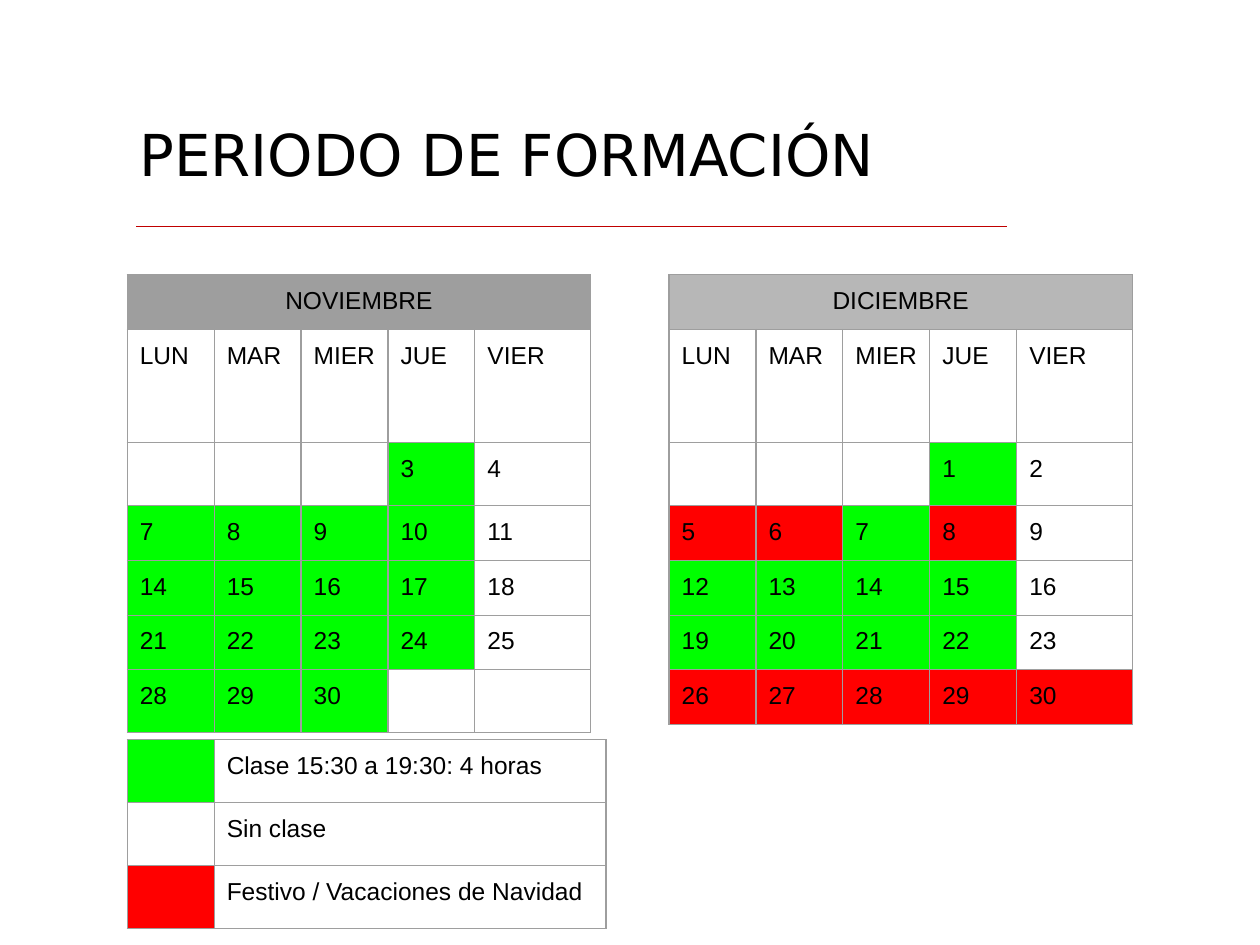
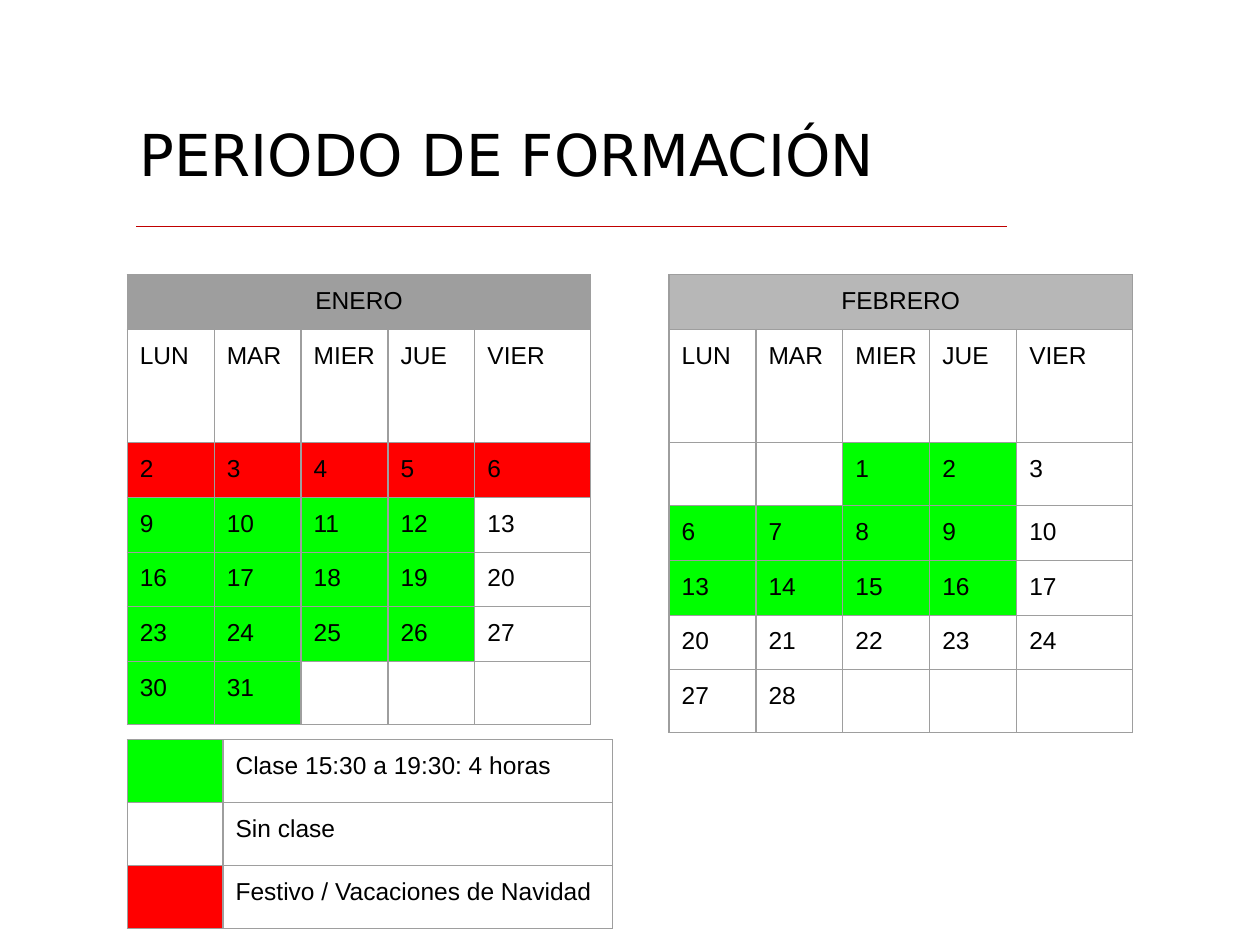
from dataclasses import dataclass

from lxml import etree
from pptx import Presentation
from pptx.dml.color import RGBColor
from pptx.enum.shapes import MSO_CONNECTOR
from pptx.enum.text import MSO_ANCHOR, PP_ALIGN
from pptx.oxml.ns import qn
from pptx.util import Inches, Pt

STRAIGHT = MSO_CONNECTOR.STRAIGHT
MIDDLE = MSO_ANCHOR.MIDDLE
LEFT, CENTER = PP_ALIGN.LEFT, PP_ALIGN.CENTER

BLACK = RGBColor(0x00, 0x00, 0x00)
WHITE = RGBColor(0xFF, 0xFF, 0xFF)
RULE_RED = RGBColor(0xC0, 0x00, 0x00)
CLASS_GREEN = RGBColor(0x00, 0xFF, 0x00)
HOLIDAY_RED = RGBColor(0xFF, 0x00, 0x00)
DARK_GRAY = RGBColor(0x9E, 0x9E, 0x9E)
LIGHT_GRAY = RGBColor(0xB7, 0xB7, 0xB7)

TITLE_FONT, BODY_FONT = "DejaVu Sans", "Arial"
BLANK_LAYOUT = 6
LINE_WIDTH = Pt(0.75)
CELL_MARGIN = Inches(0.1)

WEEKDAYS = ["LUN", "MAR", "MIER", "JUE", "VIER"]
FRIDAY = 4
WEEKS = 5
DAY_WIDTHS = [0.69] * 4 + [0.92]
ROW_HEIGHT, TALL_ROW_HEIGHT, WEEKDAY_ROW_HEIGHT = 0.43, 0.48, 0.9

LEFT_EDGE = 1.01
CALENDAR_TOP, CALENDAR_STEP = 2.18, 4.3
LEGEND_TOP = 5.87
LEGEND = [
    (CLASS_GREEN, "Clase 15:30 a 19:30: 4 horas"),
    (WHITE, "Sin clase"),
    (HOLIDAY_RED, "Festivo / Vacaciones de Navidad"),
]


@dataclass
class Month:
    """Days shown for a month; first_monday may fall before day 1."""

    name: str
    first_monday: int
    first_day: int
    last_day: int
    last_class: int
    holidays: tuple = ()


SLIDES = [
    (
        [Month("NOVIEMBRE", 0, 3, 30, 30),
         Month("DICIEMBRE", -2, 1, 30, 22, (5, 6, 8, 26, 27, 28, 29, 30))],
        [0.69, 3.11],
    ),
    (
        [Month("ENERO", 2, 2, 31, 31, (2, 3, 4, 5, 6)),
         Month("FEBRERO", -1, 1, 28, 16)],
        [0.76, 3.09],
    ),
]


def style_run(run, font_name, size):
    """Give a run its font, size and black colour."""
    run.font.name = font_name
    run.font.size = Pt(size)
    run.font.color.rgb = BLACK


def set_borders(cell):
    """Draw a thin gray line on each side of a cell."""
    properties = cell._tc.get_or_add_tcPr()
    for side in ("a:lnL", "a:lnR", "a:lnT", "a:lnB"):
        line = etree.SubElement(properties, qn(side), w=str(LINE_WIDTH))
        fill = etree.SubElement(line, qn("a:solidFill"))
        etree.SubElement(fill, qn("a:srgbClr"), val=str(DARK_GRAY))


def fill_cell(cell, text, color, alignment=LEFT):
    """Set the fill and text of a table cell."""
    cell.fill.solid()
    cell.fill.fore_color.rgb = color
    if text:
        cell.text_frame.text = text
        paragraph = cell.text_frame.paragraphs[0]
        paragraph.alignment = alignment
        style_run(paragraph.runs[0], BODY_FONT, 14)


def add_grid(slide, left, top, widths, heights):
    """Add a plain bordered table with the given column and row sizes."""
    shape = slide.shapes.add_table(
        len(heights), len(widths), Inches(left), Inches(top),
        Inches(sum(widths)), Inches(sum(heights)))
    table = shape.table
    table.first_row = table.horz_banding = False
    for column, width in zip(table.columns, widths):
        column.width = Inches(width)
    for row, height in zip(table.rows, heights):
        row.height = Inches(height)
    for cell in table.iter_cells():
        cell.margin_left = cell.margin_right = CELL_MARGIN
        cell.margin_top = cell.margin_bottom = CELL_MARGIN
        set_borders(cell)
    return table


def day_color(month, day, weekday):
    """Return the fill for a day: holiday, class or no class."""
    if day in month.holidays:
        return HOLIDAY_RED
    if month.first_day <= day <= month.last_class and weekday < FRIDAY:
        return CLASS_GREEN
    return WHITE


def add_calendar(slide, left, top, month, header_color):
    """Add a month table with its name, weekdays and five weeks."""
    weeks = [[month.first_monday + 7 * week + weekday for weekday in range(5)]
             for week in range(WEEKS)]
    shown = range(month.first_day, month.last_day + 1)
    week_heights = [ROW_HEIGHT if all(day in shown for day in week)
                    else TALL_ROW_HEIGHT for week in weeks]
    table = add_grid(slide, left, top, DAY_WIDTHS,
                     [ROW_HEIGHT, WEEKDAY_ROW_HEIGHT] + week_heights)
    table.cell(0, 0).merge(table.cell(0, len(WEEKDAYS) - 1))
    fill_cell(table.cell(0, 0), month.name, header_color, CENTER)
    for weekday, name in enumerate(WEEKDAYS):
        fill_cell(table.cell(1, weekday), name, WHITE)
    for row, week in enumerate(weeks, start=2):
        for weekday, day in enumerate(week):
            fill_cell(table.cell(row, weekday), str(day) if day in shown else "",
                      day_color(month, day, weekday))


def add_legend(slide, left, top, widths):
    """Add the table that explains the day colours."""
    table = add_grid(slide, left, top, widths, [TALL_ROW_HEIGHT] * len(LEGEND))
    for row, (color, meaning) in enumerate(LEGEND):
        fill_cell(table.cell(row, 0), "", color)
        fill_cell(table.cell(row, 1), meaning, WHITE)


def add_title(slide, left, top, text):
    """Add the slide title and the red rule below it."""
    rule_top = Inches(top + 1.12)
    rule = slide.shapes.add_connector(
        STRAIGHT, Inches(left + 0.07), rule_top, Inches(left + 6.98), rule_top)
    rule.line.color.rgb = RULE_RED
    rule.line.width = LINE_WIDTH
    etree.SubElement(rule._element.spPr, qn("a:effectLst"))
    box = slide.shapes.add_textbox(
        Inches(left), Inches(top), Inches(9), Inches(1.08))
    frame = box.text_frame
    frame.word_wrap = True
    frame.vertical_anchor = MIDDLE
    frame.text = text
    style_run(frame.paragraphs[0].runs[0], TITLE_FONT, 33)


def add_period_slide(presentation, months, legend_widths):
    """Add a slide with two months side by side and the legend."""
    slide = presentation.slides.add_slide(
        presentation.slide_layouts[BLANK_LAYOUT])
    add_title(slide, LEFT_EDGE, 0.68, "PERIODO DE FORMACIÓN")
    for index, (month, color) in enumerate(zip(months, (DARK_GRAY, LIGHT_GRAY))):
        add_calendar(slide, LEFT_EDGE + index * CALENDAR_STEP, CALENDAR_TOP,
                     month, color)
    add_legend(slide, LEFT_EDGE, LEGEND_TOP, legend_widths)


def main():
    """Build the presentation and save it."""
    presentation = Presentation()
    presentation.slide_width = Inches(10)
    presentation.slide_height = Inches(7.5)
    for months, legend_widths in SLIDES:
        add_period_slide(presentation, months, legend_widths)
    presentation.save("out.pptx")


if __name__ == "__main__":
    main()
